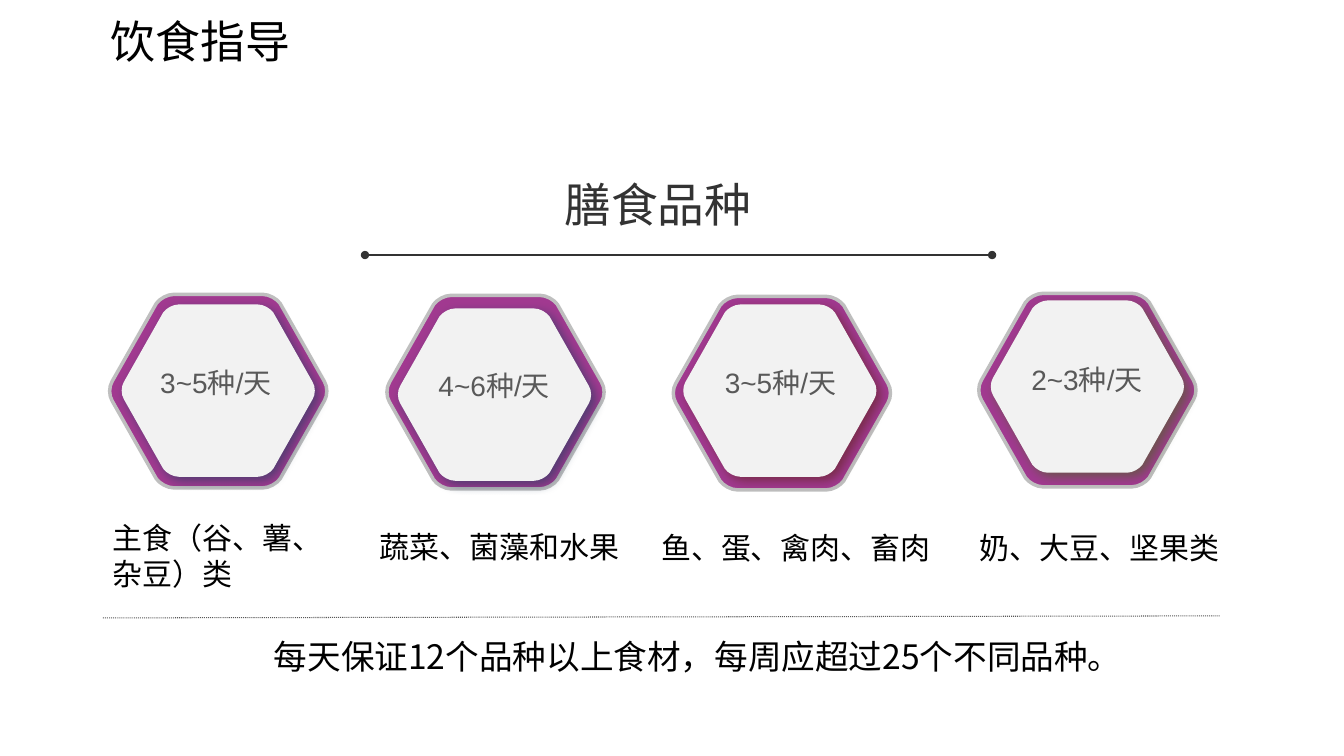
from dataclasses import dataclass

from lxml.etree import SubElement
from pptx import Presentation
from pptx.dml.color import RGBColor
from pptx.enum.dml import MSO_LINE
from pptx.enum.text import MSO_AUTO_SIZE, PP_ALIGN as AL
from pptx.oxml.ns import qn
from pptx.util import Inches, Pt

COLORS = {
    "black": "000000", "heading": "333333", "grey": "595959",
    "purple": "A13990", "rim": "BFBFBF", "face": "F2F2F2",
    "navy": "254061", "maroon": "632523", "olive": "4F6228",
}
CJK = "Noto Sans CJK SC"
LINE_PITCH = 1.2
UNITS = 1000
BOTTOM_CORNER = [(0.297, 1), (0.267, 1), (0.232, 0.977), (0.217, 0.953)]
SIDE_CORNER = [(0.015, 0.55), (0, 0.523), (0, 0.477), (0.015, 0.45)]


@dataclass
class Label:
    text: str
    left: float
    top: float
    width: float
    height: float
    size: float
    color: str = "black"
    font: str = CJK
    align: AL = AL.LEFT


@dataclass
class Rule:
    x1: float
    y1: float
    x2: float
    y2: float
    color: str
    width: float
    dash: MSO_LINE = MSO_LINE.SOLID
    oval_ends: bool = False


@dataclass
class Group:
    amount: str
    outer: tuple[float, float]
    inner: tuple[float, float]
    amount_at: tuple[float, float]
    shadow: str
    food: Label


def rgb(name: str) -> RGBColor:
    return RGBColor.from_string(COLORS[name])


def apply(target, values: dict) -> None:
    for key, value in values.items():
        setattr(target, key, value)


def hexagon_outline() -> list:
    top_corner = [(x, 1 - y) for x, y in reversed(BOTTOM_CORNER)]
    left = BOTTOM_CORNER + SIDE_CORNER + top_corner
    right = [(1 - x, y) for x, y in reversed(left)]
    return [(x * UNITS, y * UNITS) for x, y in left + right]


def round_corners(sp) -> None:
    outline = next(sp._element.iter(qn("a:path")))
    segments = outline.findall(qn("a:lnTo"))
    for i in range(0, len(segments) - 2, 4):
        corner = segments[i:i + 3]
        curve = corner[0].makeelement(qn("a:cubicBezTo"))
        corner[0].addprevious(curve)
        for segment in corner:
            curve.append(segment[0])
            outline.remove(segment)


def add_hexagon(slide, at: tuple, size: tuple, fill: str):
    start, *rest = hexagon_outline()
    scale = tuple(Inches(length) / UNITS for length in size)
    fb = slide.shapes.build_freeform(*start, scale=scale)
    fb.add_line_segments(rest, close=False)
    sp = fb.convert_to_shape(Inches(at[0]), Inches(at[1]))
    round_corners(sp)
    SubElement(next(sp._element.iter(qn("a:path"))), qn("a:close"))
    sp.shadow.inherit = False
    sp.fill.solid()
    sp.fill.fore_color.rgb = rgb(fill)
    sp.line.fill.background()
    return sp


def add_shadow(sp, color: str) -> None:
    effects = sp._element.spPr.find(qn("a:effectLst"))
    shadow = SubElement(effects, qn("a:outerShdw"), blurRad=str(Pt(8)),
                        dist=str(Pt(4)), dir=str(45 * 60000),
                        algn="ctr", rotWithShape="0")
    clr = SubElement(shadow, qn("a:srgbClr"), val=COLORS[color])
    SubElement(clr, qn("a:alpha"), val="64000")


def add_label(slide, label: Label) -> None:
    box = (label.left, label.top, label.width, label.height)
    sp = slide.shapes.add_textbox(*map(Inches, box))
    tf = sp.text_frame
    apply(tf, {"word_wrap": True, "auto_size": MSO_AUTO_SIZE.SHAPE_TO_FIT_TEXT})
    p = tf.paragraphs[0]
    apply(p, {"alignment": label.align, "line_spacing": Pt(label.size * LINE_PITCH)})
    r = p.add_run()
    r.text = label.text
    apply(r.font, {"size": Pt(label.size), "name": label.font})
    r.font.color.rgb = rgb(label.color)
    SubElement(r._r.get_or_add_rPr(), qn("a:ea"), typeface=CJK)


def add_rule(slide, rule: Rule) -> None:
    ends = (rule.x1, rule.y1, rule.x2, rule.y2)
    line = slide.shapes.add_connector(1, *map(Inches, ends))
    line.line.color.rgb = rgb(rule.color)
    apply(line.line, {"width": Pt(rule.width), "dash_style": rule.dash})
    if rule.oval_ends:
        for end in ("a:headEnd", "a:tailEnd"):
            SubElement(line.line._get_or_add_ln(), qn(end), type="oval")
    SubElement(line._element.spPr, qn("a:effectLst"))


def add_group(slide, group: Group) -> None:
    rim = add_hexagon(slide, group.outer, (2.17, 1.92), "purple")
    rim.line.color.rgb = rgb("rim")
    rim.line.width = Pt(2.5)
    add_shadow(add_hexagon(slide, group.inner, (1.93, 1.71), "face"), group.shadow)
    add_label(slide, Label(group.amount, *group.amount_at, 1.39, 0.44, 20,
                           "grey", "Arial"))
    add_label(slide, group.food)


GROUPS = [
    Group("3~5种/天", (1.08, 2.92), (1.2, 3.02), (1.49, 3.58), "navy",
          Label("主食（谷、薯、杂豆）类", 1.02, 5.11, 2.22, 0.82, 21.4)),
    Group("4~6种/天", (3.83, 2.93), (3.94, 3.06), (4.25, 3.61), "navy",
          Label("蔬菜、菌藻和水果", 3.67, 5.19, 2.6, 0.46, 21.4)),
    Group("3~5种/天", (6.67, 2.94), (6.77, 3.02), (7.09, 3.58), "maroon",
          Label("鱼、蛋、禽肉、畜肉", 6.46, 5.2, 2.94, 0.46, 21.4)),
    Group("2~3种/天", (9.7, 2.91), (9.82, 2.98), (10.13, 3.55), "olive",
          Label("奶、大豆、坚果类", 9.62, 5.2, 2.6, 0.46, 21.4)),
]
LABELS = [
    Label("饮食指导", 1, 0.09, 2.77, 0.64, 32),
    Label("膳食品种", 4.06, 1.69, 4.93, 0.66, 33.4, "heading", align=AL.CENTER),
    Label("每天保证12个品种以上食材，每周应超过25个不同品种。",
          2.53, 6.26, 8.78, 0.91, 24, align=AL.CENTER),
]
RULES = [
    Rule(3.62, 2.53, 9.84, 2.53, "heading", 1.5, oval_ends=True),
    Rule(1.02, 6.13, 12.1, 6.11, "grey", 0.75, MSO_LINE.ROUND_DOT),
]


def main() -> None:
    prs = Presentation()
    apply(prs, {"slide_width": Inches(13.33), "slide_height": Inches(7.5)})
    s = prs.slides.add_slide(prs.slide_layouts[6])
    for group in GROUPS:
        add_group(s, group)
    for rule in RULES:
        add_rule(s, rule)
    for label in LABELS:
        add_label(s, label)
    prs.save("out.pptx")


if __name__ == "__main__":
    main()
